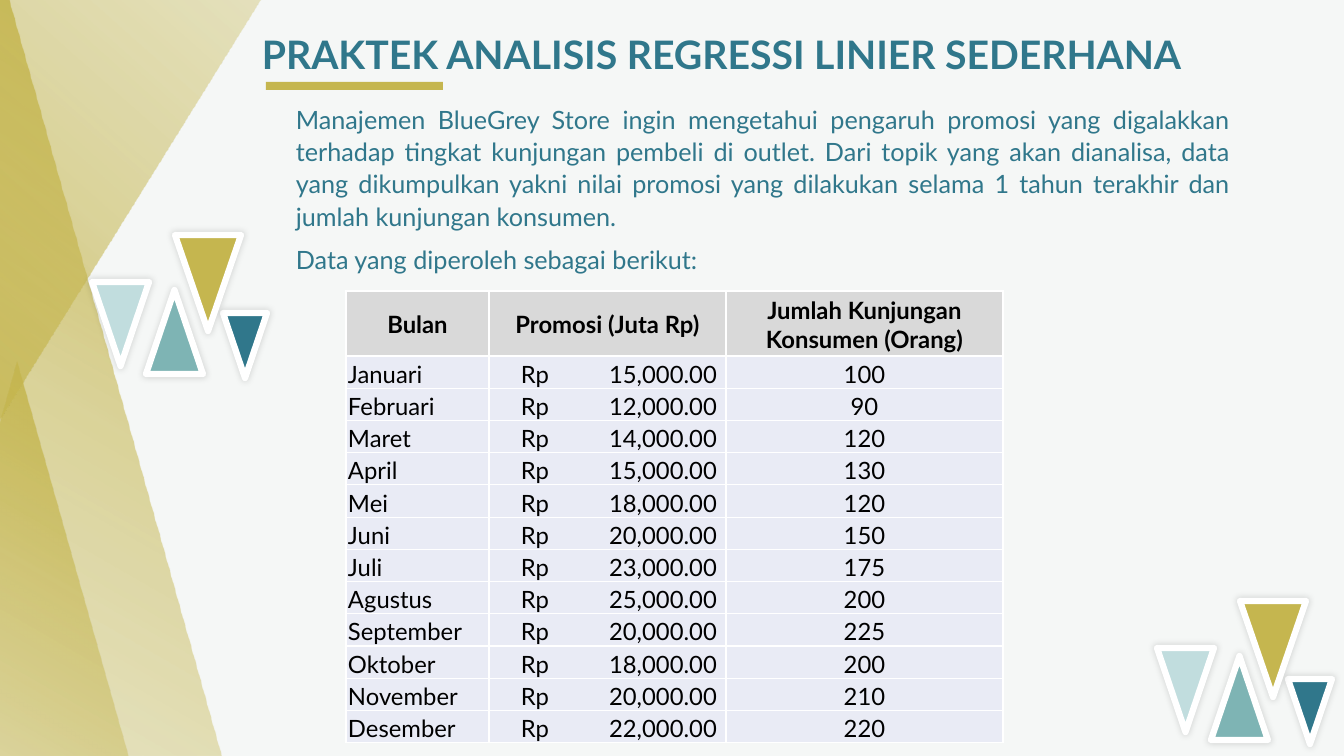
from dataclasses import dataclass
from typing import Optional

from lxml import etree
from pptx import Presentation
from pptx.dml.color import RGBColor
from pptx.enum.shapes import MSO_SHAPE
from pptx.enum.text import MSO_ANCHOR, PP_ALIGN
from pptx.oxml import parse_xml
from pptx.oxml.ns import qn
from pptx.util import Emu, Pt

RECTANGLE, TRIANGLE = MSO_SHAPE.RECTANGLE, MSO_SHAPE.ISOSCELES_TRIANGLE
LEFT, CENTER, JUSTIFY = PP_ALIGN.LEFT, PP_ALIGN.CENTER, PP_ALIGN.JUSTIFY
MIDDLE, BOTTOM = MSO_ANCHOR.MIDDLE, MSO_ANCHOR.BOTTOM

PX_PER_INCH = 100.8
FONT = "Lato"
DRAWING = 'xmlns:a="http://schemas.openxmlformats.org/drawingml/2006/main"'
COLORS = {
    "backdrop": "F5F7F6", "gold": "C5B64F", "blue": "30778B", "teal": "7EB4B4",
    "mint": "C1DDDE", "white": "FFFFFF", "black": "000000",
    "header": "D9D9D9", "row": "E9EBF5",
}


@dataclass
class Box:
    left: int
    top: int
    width: int
    height: int
    rotation: float = 0


@dataclass
class Triangle:
    box: Box
    color: str


@dataclass
class Month:
    name: str
    promotion: int
    visits: int


BACKDROP_TRIANGLES = [
    Box(-101, 362, 236, 419),
    Box(-221, -32, 442, 788),
    Box(-175, -117, 424, 574, 191.6),
]
CLUSTER = [
    Triangle(Box(54, 55, 57, 84), "teal"),
    Triangle(Box(0, 47, 57, 84, 180), "mint"),
    Triangle(Box(131, 78, 44, 65, 180), "blue"),
    Triangle(Box(83, 0, 66, 96, 180), "gold"),
]
CLUSTER_ORIGINS = [(92, 235), (1157, 601)]
BODY = [
    "Manajemen BlueGrey Store ingin mengetahui pengaruh promosi yang digalakkan "
    "terhadap tingkat kunjungan pembeli di outlet. Dari topik yang akan dianalisa, "
    "data yang dikumpulkan yakni nilai promosi yang dilakukan selama 1 tahun "
    "terakhir dan jumlah kunjungan konsumen.",
    "Data yang diperoleh sebagai berikut:",
]
HEADERS = ["Bulan", "Promosi (Juta Rp)", "Jumlah Kunjungan Konsumen (Orang)"]
COLUMN_WIDTHS = [143, 237, 277]
HEADER_HEIGHT, MONTHS_HEIGHT = 65, 387
CELL_INSET, CURRENCY_INSET, AMOUNT_TAB = 2, 32, 196
MONTHS = [
    Month("Januari", 15000, 100), Month("Februari", 12000, 90),
    Month("Maret", 14000, 120), Month("April", 15000, 130),
    Month("Mei", 18000, 120), Month("Juni", 20000, 150),
    Month("Juli", 23000, 175), Month("Agustus", 25000, 200),
    Month("September", 20000, 225), Month("Oktober", 18000, 200),
    Month("November", 20000, 210), Month("Desember", 22000, 220),
]


def px(length: float) -> Emu:
    return Emu(round(length * 914400 / PX_PER_INCH))


def rgb(name: str) -> RGBColor:
    return RGBColor.from_string(COLORS[name])


def frame(box: Box) -> list[Emu]:
    return [px(side) for side in (box.left, box.top, box.width, box.height)]


def write(paragraph, text: str, *, size: float, color: str, bold: bool = False,
          align=LEFT, line_spacing: Optional[float] = None,
          space_after: float = 0, right_tab: int = 0) -> None:
    paragraph.alignment = align
    paragraph.space_after = Pt(space_after)
    if line_spacing:
        paragraph.line_spacing = line_spacing
    if right_tab:
        tabs = etree.SubElement(paragraph._p.get_or_add_pPr(), qn("a:tabLst"))
        etree.SubElement(tabs, qn("a:tab"), pos=str(px(right_tab)), algn="r")
    run = paragraph.add_run()
    run.text = text
    run.font.name, run.font.size, run.font.bold = FONT, Pt(size), bold
    run.font.color.rgb = rgb(color)


def add_text(slide, box: Box, texts: list[str], **text_format) -> None:
    text_frame = slide.shapes.add_textbox(*frame(box)).text_frame
    text_frame.word_wrap = True
    for index, text in enumerate(texts):
        paragraph = text_frame.add_paragraph() if index else text_frame.paragraphs[0]
        write(paragraph, text, **text_format)


def add_solid(shapes, kind, box: Box, color: str):
    shape = shapes.add_shape(kind, *frame(box))
    shape.rotation = box.rotation
    shape.shadow.inherit = False
    shape.fill.solid()
    shape.fill.fore_color.rgb = rgb(color)
    shape.line.fill.background()
    return shape


def add_faded_triangle(slide, box: Box) -> None:
    properties = add_solid(slide.shapes, TRIANGLE, box, "gold").element.spPr
    stops = "".join(
        f'<a:gs pos="{position}000"><a:srgbClr val="{COLORS["gold"]}">'
        f'<a:alpha val="{alpha}000"/></a:srgbClr></a:gs>'
        for position, alpha in ((0, 100), (50, 55), (100, 23)))
    gradient = parse_xml(
        f'<a:gradFill {DRAWING} rotWithShape="1"><a:gsLst>{stops}</a:gsLst>'
        '<a:lin ang="7200000" scaled="0"/></a:gradFill>')
    properties.replace(properties.find(qn("a:solidFill")), gradient)


def add_cluster(slide, left: int, top: int) -> None:
    group = slide.shapes.add_group_shape()
    for triangle in CLUSTER:
        box = triangle.box
        placed = Box(left + box.left, top + box.top, box.width, box.height, box.rotation)
        shape = add_solid(group.shapes, TRIANGLE, placed, triangle.color)
        shape.line.color.rgb = rgb("white")
        shape.line.width = Pt(4.5)
        shape.element.spPr.find(qn("a:effectLst")).append(parse_xml(
            f'<a:outerShdw {DRAWING} blurRad="{Pt(5)}" dist="0" dir="0">'
            f'<a:srgbClr val="{COLORS["black"]}"><a:alpha val="15000"/></a:srgbClr>'
            '</a:outerShdw>'))


def fill_cell(cell, text: str, *, fill: str, anchor=BOTTOM,
              left_inset: int = CELL_INSET, **text_format) -> None:
    properties = cell._tc.get_or_add_tcPr()
    for side in ("lnL", "lnR", "lnT", "lnB"):
        properties.append(parse_xml(
            f'<a:{side} {DRAWING} w="{Pt(1)}"><a:solidFill>'
            f'<a:srgbClr val="{COLORS["white"]}"/></a:solidFill></a:{side}>'))
    cell.fill.solid()
    cell.fill.fore_color.rgb = rgb(fill)
    cell.vertical_anchor = anchor
    cell.margin_left = px(left_inset)
    cell.margin_right = cell.margin_top = px(CELL_INSET)
    cell.margin_bottom = 0
    write(cell.text_frame.paragraphs[0], text, size=17, color="black", **text_format)


def add_visits_table(slide) -> None:
    box = Box(346, 291, sum(COLUMN_WIDTHS), HEADER_HEIGHT + MONTHS_HEIGHT)
    table = slide.shapes.add_table(
        len(MONTHS) + 1, len(HEADERS), *frame(box)).table
    table.first_row = table.horz_banding = False
    for column, width in zip(table.columns, COLUMN_WIDTHS):
        column.width = px(width)
    for row in table.rows:
        row.height = px(MONTHS_HEIGHT / len(MONTHS))
    table.rows[0].height = px(HEADER_HEIGHT)
    for index, header in enumerate(HEADERS):
        fill_cell(table.cell(0, index), header, fill="header", anchor=MIDDLE,
                  bold=True, align=CENTER)
    for index, month in enumerate(MONTHS, start=1):
        fill_cell(table.cell(index, 0), month.name, fill="row")
        fill_cell(table.cell(index, 1), f"Rp\t{month.promotion:,.2f}", fill="row",
                  left_inset=CURRENCY_INSET, right_tab=AMOUNT_TAB)
        fill_cell(table.cell(index, 2), str(month.visits), fill="row", align=CENTER)


def main() -> None:
    presentation = Presentation()
    presentation.slide_width, presentation.slide_height = px(1344), px(756)
    slide = presentation.slides.add_slide(presentation.slide_layouts[6])

    # Backdrop
    add_solid(slide.shapes, RECTANGLE, Box(0, 0, 1344, 756), "backdrop")
    for box in BACKDROP_TRIANGLES:
        add_faded_triangle(slide, box)

    # Title and introduction
    add_text(slide, Box(252, 25, 1026, 57), ["PRAKTEK ANALISIS REGRESSI LINIER SEDERHANA"],
             size=28, color="blue", bold=True, align=JUSTIFY)
    add_solid(slide.shapes, RECTANGLE, Box(266, 82, 177, 8), "gold")
    add_text(slide, Box(286, 97, 954, 184), BODY, size=18, color="blue",
             align=JUSTIFY, line_spacing=1.07, space_after=8)

    # Triangle clusters and data
    for left, top in CLUSTER_ORIGINS:
        add_cluster(slide, left, top)
    add_visits_table(slide)
    presentation.save("out.pptx")


if __name__ == "__main__":
    main()
